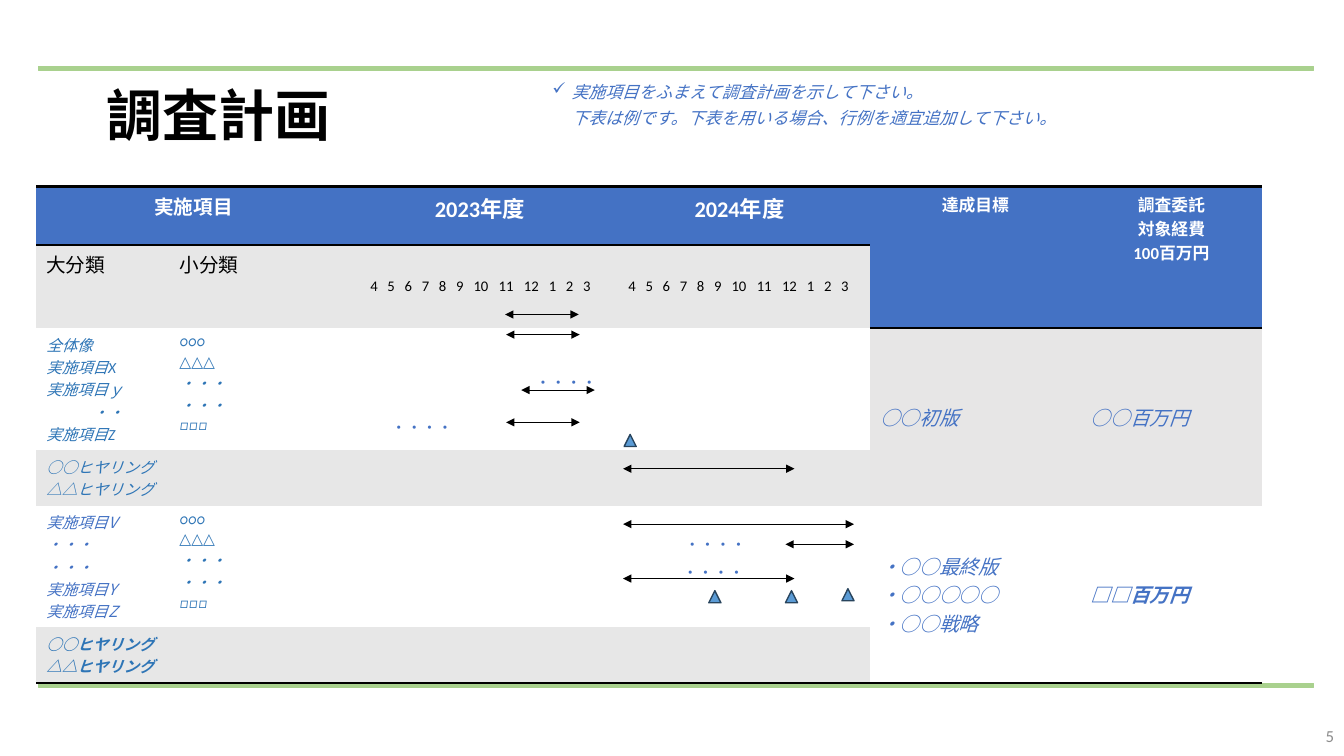
from dataclasses import dataclass, replace
from itertools import accumulate, pairwise
from typing import NamedTuple

from lxml import etree
from pptx import Presentation
from pptx import util as u
from pptx.dml.color import RGBColor
from pptx.enum import shapes, text
from pptx.oxml import ns

BLUE, TEAL, WHITE, BLACK, GREY = "4472C4", "2E75B6", "FFFFFF", "000000", "E7E7E7"
CJK = "Noto Sans CJK JP"
LEFT, CENTER, RIGHT = text.PP_ALIGN.LEFT, text.PP_ALIGN.CENTER, text.PP_ALIGN.RIGHT
MONTHS = ["4", "5", "6", "7", "8", "9", "10", "11", "12", "1", "2", "3"]


@dataclass(frozen=True)
class Look:
    size: float
    color: str
    bold: bool = False
    italic: bool = False
    font: str = "Calibri"
    align: text.PP_ALIGN = LEFT


class Line(NamedTuple):
    text: str
    indent: float = 0
    before: float = 0


@dataclass(frozen=True)
class Entry:
    row: int
    col: int
    lines: list[Line]
    look: Look
    middle: bool = False
    top: float = 0.05
    rows: int = 1
    cols: int = 1


class Arrow(NamedTuple):
    x1: float
    x2: float
    y: float


class Marker(NamedTuple):
    x: float
    y: float


def rgb(value: str) -> RGBColor:
    return RGBColor.from_string(value)


def lines(*texts: str) -> list[Line]:
    return [Line(t) for t in texts]


def sub(parent, tag: str, **attrs: str):
    child = etree.SubElement(parent, ns.qn(tag))
    for name, value in attrs.items():
        child.set(name, value)
    return child


def write(tf, content: list[Line], look: Look) -> list:
    for i, line in enumerate(content):
        p = tf.paragraphs[0] if i == 0 else tf.add_paragraph()
        p.alignment = look.align
        if line.indent:
            p._p.get_or_add_pPr().set("marL", str(u.Inches(line.indent)))
        if line.before:
            p.space_before = u.Pt(line.before)
        for j, part in enumerate(line.text.split("\v")):
            if j:
                p.add_line_break()
            r = p.add_run()
            r.text = part
            fmt = {"size": u.Pt(look.size), "bold": look.bold,
                   "italic": look.italic, "name": look.font}
            for name, value in fmt.items():
                setattr(r.font, name, value)
            r.font.color.rgb = rgb(look.color)
            sub(r._r.get_or_add_rPr(), "a:ea", typeface=CJK)
    return list(tf.paragraphs)


def add_text(s, box: tuple, content: list[Line], look: Look, middle: bool = True) -> list:
    tf = s.shapes.add_textbox(*map(u.Inches, box)).text_frame
    tf.word_wrap = True
    tf.vertical_anchor = text.MSO_ANCHOR.MIDDLE if middle else text.MSO_ANCHOR.TOP
    return write(tf, content, look)


def add_filled(s, kind, box: tuple, fill: str, line: str) -> None:
    sp = s.shapes.add_shape(kind, *map(u.Inches, box))
    sp.shadow.inherit = False
    sp.fill.solid()
    sp.fill.fore_color.rgb = rgb(fill)
    sp.line.color.rgb = rgb(line)
    sp.line.width = u.Pt(1)


def add_arrow(s, arrow: Arrow) -> None:
    ends = map(u.Inches, (arrow.x1, arrow.y, arrow.x2, arrow.y))
    sp = s.shapes.add_connector(shapes.MSO_CONNECTOR.STRAIGHT, *ends)
    sp.line.color.rgb = rgb(BLACK)
    sp.line.width = u.Pt(0.5)
    ln = sp.line._get_or_add_ln()
    for tag in ("a:headEnd", "a:tailEnd"):
        sub(ln, tag, type="triangle")
    sub(sp._element.spPr, "a:effectLst")


def add_border(cell, tag: str) -> None:
    tc_pr = cell._tc.get_or_add_tcPr()
    ln = sub(tc_pr, tag, w=str(u.Pt(2)))
    sub(sub(ln, "a:solidFill"), "a:srgbClr", val=BLACK)
    tc_pr.insert(0, ln)


def paint(cell, color: str) -> None:
    cell.fill.solid()
    cell.fill.fore_color.rgb = rgb(color)


def add_month_tabs(p) -> None:
    steps = [0.1 + 0.04 * (len(a) + len(b)) - 0.01 for a, b in pairwise(MONTHS)]
    tabs = sub(p._p.get_or_add_pPr(), "a:tabLst")
    for stop in accumulate(steps, initial=0.13):
        sub(tabs, "a:tab", pos=str(u.Inches(stop)), algn="ctr")


HEAD = Look(14, WHITE, bold=True, align=CENTER)
YEAR, SIDE = replace(HEAD, size=16), replace(HEAD, size=12)
CLASS, MONTH = Look(14, BLACK), Look(10.5, BLACK)
ITEM = Look(11, TEAL, italic=True)
TASK = replace(ITEM, color=BLUE, font=CJK)
GOAL = Look(14, BLUE, italic=True)
DOTS = Look(11, BLUE)
SUBITEMS = lines("○○○", "△△△", "・・・", "・・・", "□□□")
HEARINGS = lines("○○ヒヤリング", "△△ヒヤリング")
MONTH_LINE = lines("".join("\t" + m for m in MONTHS))

ENTRIES = [
    Entry(0, 0, lines("実施項目"), HEAD, cols=2),
    Entry(0, 2, lines("2023年度"), YEAR),
    Entry(0, 3, lines("2024年度"), YEAR),
    Entry(0, 4, lines("達成目標"), SIDE, rows=2),
    Entry(0, 5, lines("調査委託", "対象経費", "100百万円"), SIDE, rows=2),
    Entry(1, 0, lines("大分類"), CLASS),
    Entry(1, 1, lines("小分類"), CLASS),
    Entry(1, 2, MONTH_LINE, MONTH, middle=True),
    Entry(1, 3, MONTH_LINE, MONTH, middle=True),
    Entry(2, 0, [*lines("全体像", "実施項目X", "実施項目ｙ"), Line("・・", 0.46), Line("実施項目Z")], ITEM),
    Entry(2, 1, SUBITEMS, ITEM),
    Entry(2, 2, [Line("・・・・", 1.73), Line("・・・・", 0.3, 16)], DOTS, top=0.42),
    Entry(2, 4, lines("○○初版"), GOAL, middle=True, rows=2),
    Entry(2, 5, lines("○○百万円"), GOAL, middle=True, rows=2),
    Entry(3, 0, HEARINGS, ITEM),
    Entry(4, 0, lines("実施項目V", "・・・", "・・・", "実施項目Y", "実施項目Z"), TASK),
    Entry(4, 1, SUBITEMS, ITEM),
    Entry(4, 3, [Line("・・・・", 0.65), Line("・・・・", 0.63, 3.6)], DOTS, top=0.27),
    Entry(4, 4, lines("・○○最終版", "・○○○○○", "・○○戦略"), GOAL, middle=True, rows=2),
    Entry(4, 5, lines("□□百万円"), replace(GOAL, bold=True), middle=True, rows=2),
    Entry(5, 0, HEARINGS, replace(ITEM, bold=True)),
]
COLS = [1.32, 1.8, 2.56, 2.59, 2.09, 1.8]
ROWS = [0.58, 0.82, 1.21, 0.55, 1.21, 0.55]
ROW_FILLS = [BLUE, GREY, WHITE, GREY, WHITE, GREY]
SIDE_FILLS = [BLUE, BLUE, "E7E6E6", "E7E6E6", WHITE, WHITE]

ARROWS = [Arrow(5.17, 5.9, 3.87), Arrow(7.79, 8.47, 5.4), Arrow(6.18, 8.47, 5.2),
          Arrow(5.01, 5.74, 3.12), Arrow(5.02, 5.75, 3.32), Arrow(6.18, 7.88, 4.65),
          Arrow(5.02, 5.75, 4.19), Arrow(6.18, 7.88, 5.74)]
MARKERS = [Marker(6.19, 4.31), Marker(7.03, 5.86), Marker(8.35, 5.84), Marker(7.79, 5.86)]


def add_plan(s) -> None:
    box = map(u.Inches, (0.36, 1.85, sum(COLS), sum(ROWS)))
    table = s.shapes.add_table(len(ROWS), len(COLS), *box).table
    table.first_row = table.horz_banding = False
    table._tbl.tblPr.find(ns.qn("a:tableStyleId")).text = "{2D5ABB26-0587-4C30-8999-92F81FD0307C}"
    for c, width in enumerate(COLS):
        table.columns[c].width = u.Inches(width)
    for r, height in enumerate(ROWS):
        table.rows[r].height = u.Inches(height)
        for c in range(len(COLS)):
            cell = table.cell(r, c)
            paint(cell, (SIDE_FILLS if c > 3 else ROW_FILLS)[r])
            if r in (0, 5) or (c > 3 and r in (1, 4)):
                add_border(cell, "a:lnB")
            if r == 0:
                add_border(cell, "a:lnT")
                cell._tc.tcPr.insert(0, cell._tc.tcPr.find(ns.qn("a:lnT")))
    for e in ENTRIES:
        cell = table.cell(e.row, e.col)
        if e.rows * e.cols > 1:
            cell.merge(table.cell(e.row + e.rows - 1, e.col + e.cols - 1))
        cell.margin_top = u.Inches(e.top)
        cell.vertical_anchor = text.MSO_ANCHOR.MIDDLE if e.middle else text.MSO_ANCHOR.TOP
        paragraphs = write(cell.text_frame, e.lines, e.look)
        if e.lines is MONTH_LINE:
            add_month_tabs(paragraphs[0])


def main() -> None:
    prs = Presentation()
    prs.slide_width, prs.slide_height = u.Inches(13.33), u.Inches(7.5)
    s = prs.slides.add_slide(prs.slide_layouts[6])
    for y in (0.66, 6.78):
        add_filled(s, shapes.MSO_SHAPE.RECTANGLE, (0.38, y, 12.65, 0.04), "A9D18E", "A9D18E")
    add_plan(s)
    title = add_text(s, (0.96, 0.61, 11.42, 1.13), lines("調査計画"), Look(40, BLACK, bold=True, font=CJK))
    title[0].line_spacing = 0.9
    add_text(s, (10.33, 7.1, 3, 0.4), lines("5"), Look(12, "8C8C8C", align=RIGHT))
    tip = "実施項目をふまえて調査計画を示して下さい。\v下表は例です。下表を用いる場合、行例を適宜追加して下さい。"
    p = add_text(s, (5.38, 0.7, 7.95, 0.6), [Line(tip, 0.19, 6)], Look(12, BLUE, italic=True), False)[0]
    p.line_spacing, p.space_after = 1.3, u.Pt(12)
    p._p.pPr.set("indent", str(u.Inches(-0.19)))
    sub(p._p.pPr, "a:buChar", char="✓")
    for arrow in ARROWS:
        add_arrow(s, arrow)
    for m in MARKERS:
        add_filled(s, shapes.MSO_SHAPE.ISOSCELES_TRIANGLE, (m.x, m.y, 0.12, 0.12), "5B9BD5", "28445D")
    prs.save("out.pptx")


if __name__ == "__main__":
    main()
